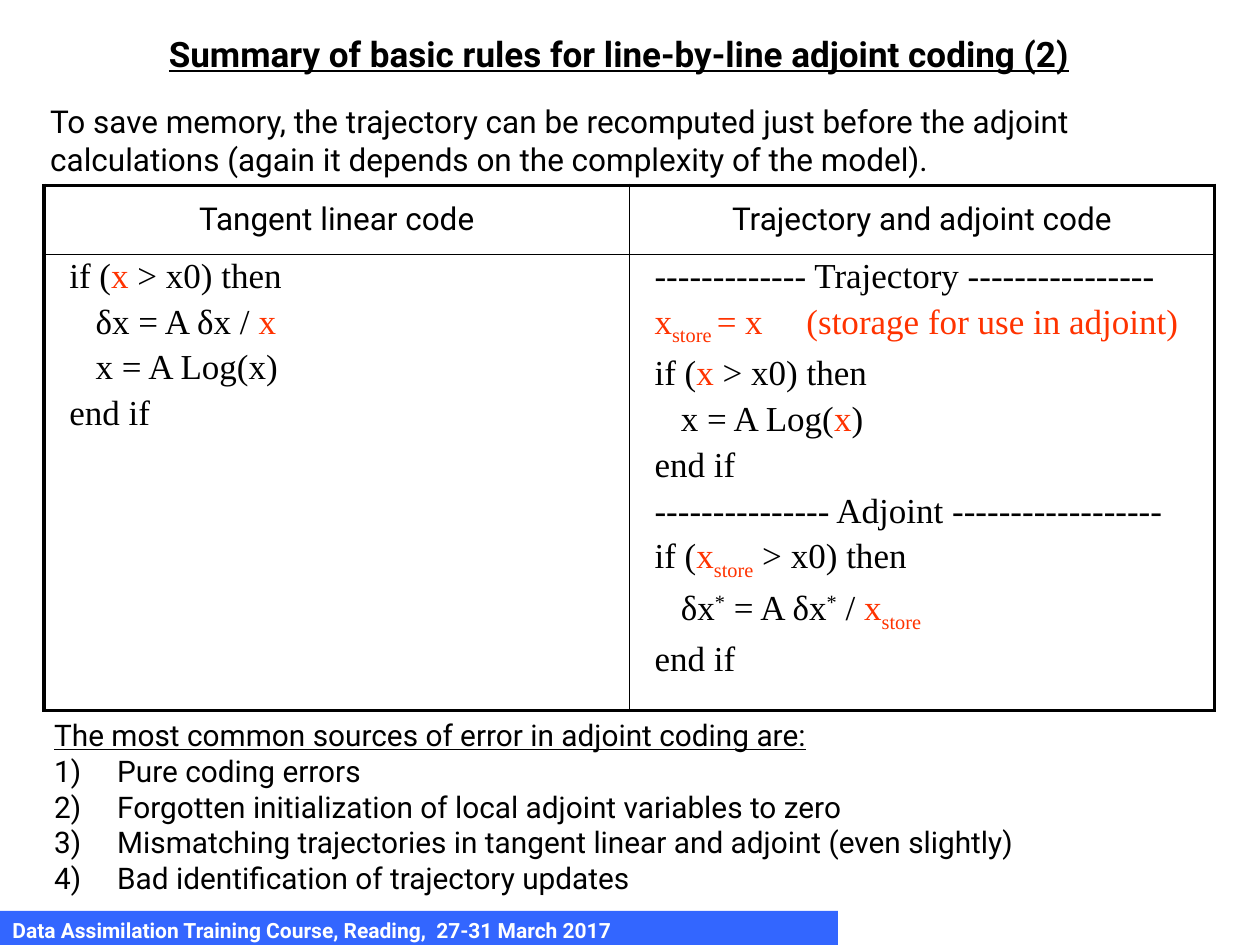
from dataclasses import dataclass
from typing import Optional

import pptx
import pptx.dml.color
import pptx.enum.shapes
import pptx.enum.text
import pptx.oxml.ns
import pptx.util
from lxml import etree

ALIGN = pptx.enum.text.PP_ALIGN
ANCHOR = pptx.enum.text.MSO_ANCHOR
COLUMNS, ROWS = 100, 75
SLIDE_WIDTH, SLIDE_HEIGHT = pptx.util.Inches(10), pptx.util.Inches(7.5)


@dataclass(frozen=True)
class Theme:
    black: str = "000000"
    white: str = "FFFFFF"
    red: str = "FF3300"
    blue: str = "3366FF"
    sans: str = "Roboto"
    serif: str = "Times New Roman"
    title: float = 20
    body: float = 18
    listing: float = 17
    code: float = 20
    footer: float = 12
    thick: float = 2.25
    thin: float = 1


THEME = Theme()


@dataclass(frozen=True)
class Area:
    """A place on the slide, in grid columns and rows."""
    column: float
    row: float
    columns: float
    rows: float

    def place(self) -> dict:
        return {"left": across(self.column), "top": down(self.row),
                "width": across(self.columns), "height": down(self.rows)}


@dataclass(frozen=True)
class Span:
    text: str
    color: str = THEME.black
    baseline: int = 0


def across(columns: float) -> int:
    return round(SLIDE_WIDTH * columns / COLUMNS)


def down(rows: float) -> int:
    return round(SLIDE_HEIGHT * rows / ROWS)


def red(text: str, baseline: int = 0) -> Span:
    return Span(text, THEME.red, baseline)


def set_all(target, values: dict) -> None:
    for name, value in values.items():
        setattr(target, name, value)


def add_span(para, span: Span, size: float, face: str, **styles) -> None:
    run = para.add_run()
    run.text = span.text
    set_all(run.font, {"size": pptx.util.Pt(size), "name": face,
                       "bold": False, "underline": False, **styles})
    run.font.color.rgb = pptx.dml.color.RGBColor.from_string(span.color)
    if span.baseline:
        run.font._element.set("baseline", str(span.baseline * 1000))


def prepare(frame, anchor=ANCHOR.TOP) -> None:
    set_all(frame, {"word_wrap": True, "vertical_anchor": anchor,
                    "auto_size": pptx.enum.text.MSO_AUTO_SIZE.NONE})


def write(frame, text: str, size: float, color: str = THEME.black,
          align=ALIGN.LEFT, **styles) -> None:
    para = frame.paragraphs[0]
    para.alignment = align
    add_span(para, Span(text, color), size, THEME.sans, **styles)


def write_code(frame, lines: list) -> None:
    for index, spans in enumerate(lines):
        para = frame.add_paragraph() if index else frame.paragraphs[0]
        if index:
            para.space_before = pptx.util.Pt(THEME.code * 0.2)
        for span in spans:
            add_span(para, span, THEME.code, THEME.serif)


def write_list(frame, heading: str, items: list) -> None:
    for index, text in enumerate([heading, *items]):
        para = frame.add_paragraph() if index else frame.paragraphs[0]
        properties = para._p.get_or_add_pPr()
        indent = across(5)
        properties.set("marL", str(indent))
        properties.set("indent", str(-indent))
        if index:
            number = etree.SubElement(properties, pptx.oxml.ns.qn("a:buFont"))
            number.set("typeface", "+mj-lt")
            number = etree.SubElement(properties, pptx.oxml.ns.qn("a:buAutoNum"))
            number.set("type", "arabicParenR")
        else:
            etree.SubElement(properties, pptx.oxml.ns.qn("a:buNone"))
        set_all(para, {"space_before": pptx.util.Pt(0), "alignment": ALIGN.JUSTIFY})
        add_span(para, Span(text), THEME.listing, THEME.sans, underline=not index)


def set_borders(cell, widths: dict) -> None:
    properties = cell._tc.get_or_add_tcPr()
    for position, (side, width) in enumerate(widths.items()):
        line = etree.Element(pptx.oxml.ns.qn(f"a:ln{side}"), w=str(pptx.util.Pt(width)))
        fill = etree.SubElement(line, pptx.oxml.ns.qn("a:solidFill"))
        etree.SubElement(fill, pptx.oxml.ns.qn("a:srgbClr"), val=THEME.black)
        properties.insert(position, line)


def add_code_table(page, area: Area, header_rows: float, columns: dict) -> None:
    table = page.shapes.add_table(2, len(columns), **area.place()).table
    set_all(table, {"first_row": False, "horz_banding": False})
    table.rows[0].height = down(header_rows)
    table.rows[1].height = down(area.rows - header_rows)
    last = len(columns) - 1
    for index, (heading, lines) in enumerate(columns.items()):
        header, body = table.cell(0, index), table.cell(1, index)
        header.vertical_anchor = ANCHOR.MIDDLE
        write(header.text_frame, heading, THEME.body, align=ALIGN.CENTER)
        set_all(body, {"margin_left": across(2), "margin_right": across(1),
                       "margin_top": down(0.2), "margin_bottom": down(0.2)})
        write_code(body.text_frame, lines)
        # Thick outer frame, thin inner lines
        for row, cell in enumerate((header, body)):
            cell.fill.background()
            outer = {"L": index == 0, "R": index == last, "T": row == 0, "B": row == 1}
            set_borders(cell, {side: THEME.thick if edge else THEME.thin
                               for side, edge in outer.items()})


def add_footer(page, area: Area, text: str) -> None:
    bar = page.shapes.add_shape(pptx.enum.shapes.MSO_SHAPE.RECTANGLE, **area.place())
    bar.shadow.inherit = False
    bar.fill.solid()
    bar.fill.fore_color.rgb = pptx.dml.color.RGBColor.from_string(THEME.blue)
    bar.line.fill.background()
    prepare(bar.text_frame, ANCHOR.MIDDLE)
    write(bar.text_frame, text, THEME.footer, THEME.white, bold=True)


TEST = [Span("if ("), red("x "), Span("> x0) then")]
END = [Span("end if")]
TANGENT_LINEAR = [
    TEST,
    [Span("   δx = A δx / "), red("x")],
    [Span("   x = A Log(x)")],
    END,
]
ADJOINT = [
    [Span("------------- Trajectory ----------------")],
    [red("x"), red("store ", -25), red("= x     (storage for use in adjoint)")],
    TEST,
    [Span("   x = A Log("), red("x"), Span(")")],
    END,
    [Span("--------------- Adjoint ------------------")],
    [Span("if ("), red("x"), red("store", -25), Span(" > x0) then")],
    [Span("   δx"), Span("*", baseline=30), Span(" = A δx"), Span("*", baseline=30),
     Span(" / "), red("x"), red("store", -25)],
    END,
]


def main() -> None:
    deck = pptx.Presentation()
    set_all(deck, {"slide_width": SLIDE_WIDTH, "slide_height": SLIDE_HEIGHT})
    page = deck.slides.add_slide(deck.slide_layouts[1])
    title, errors = page.placeholders

    # Footer bar
    add_footer(page, Area(0, 72.3, 66.5, 3),
               "Data Assimilation Training Course, Reading,  27-31 March 2017")

    # Title and introduction
    set_all(title, Area(12.4, 2.1, 77, 4.3).place())
    prepare(title.text_frame)
    write(title.text_frame, "Summary of basic rules for line-by-line adjoint coding (2)",
          THEME.title, bold=True, underline=True)
    intro = page.shapes.add_textbox(**Area(3, 7.6, 93.9, 7).place())
    prepare(intro.text_frame)
    write(intro.text_frame, "To save memory, the trajectory can be recomputed just before "
          "the adjoint calculations (again it depends on the complexity of the model).",
          THEME.body)

    # Code comparison
    add_code_table(page, Area(3.5, 14.7, 92.9, 41.7), 5.5,
                   {"Tangent linear code": TANGENT_LINEAR,
                    "Trajectory and adjoint code": ADJOINT})

    # Common errors
    set_all(errors, Area(3.3, 56.4, 93.9, 15.3).place())
    prepare(errors.text_frame)
    write_list(errors.text_frame, "The most common sources of error in adjoint coding are:", [
        "Pure coding errors",
        "Forgotten initialization of local adjoint variables to zero",
        "Mismatching trajectories in tangent linear and adjoint (even slightly)",
        "Bad identification of trajectory updates",
    ])
    deck.save("out.pptx")


if __name__ == "__main__":
    main()
